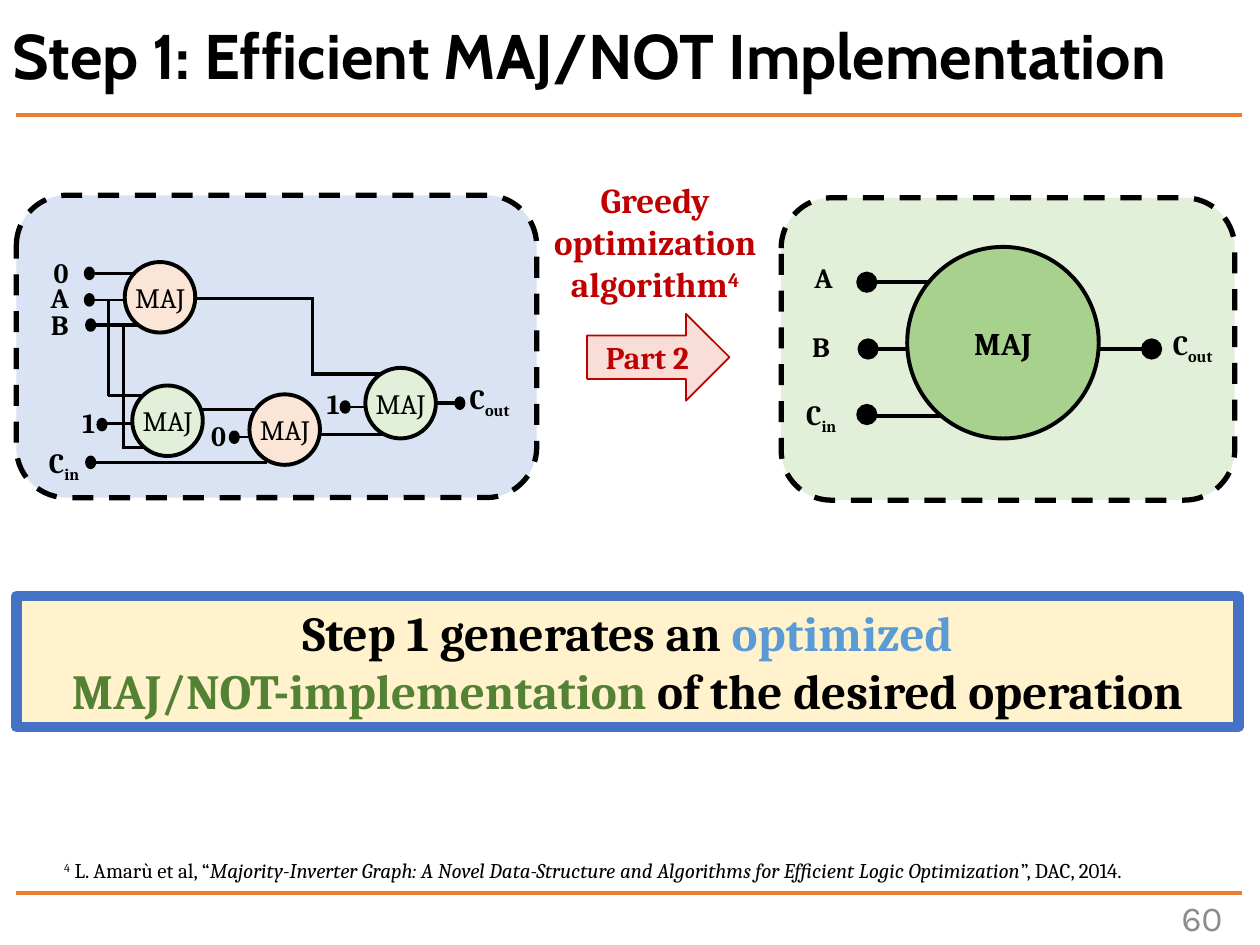
from lxml import etree
from pptx import Presentation
from pptx.dml.color import RGBColor
from pptx.enum.dml import MSO_LINE
from pptx.enum.shapes import MSO_CONNECTOR, MSO_SHAPE
from pptx.enum.text import MSO_ANCHOR, MSO_AUTO_SIZE, PP_ALIGN
from pptx.oxml.ns import qn
from pptx.util import Pt

PX = 9144
RECT, ROUND = MSO_SHAPE.RECTANGLE, MSO_SHAPE.ROUNDED_RECTANGLE
OVAL, NODE = MSO_SHAPE.OVAL, MSO_SHAPE.FLOWCHART_CONNECTOR
ARROW, WIRE, DASH = MSO_SHAPE.RIGHT_ARROW, MSO_CONNECTOR.STRAIGHT, MSO_LINE.DASH
LEFT, MID, RIGHT = PP_ALIGN.LEFT, PP_ALIGN.CENTER, PP_ALIGN.RIGHT
TOP, CENTER = MSO_ANCHOR.TOP, MSO_ANCHOR.MIDDLE
FIXED = MSO_AUTO_SIZE.NONE

HUES = {
    "ink": "000000", "rule": "ED7D31", "page": "8C8C8C", "red": "C00000",
    "blush": "F9DED7", "cream": "FFF2CC", "frame": "4472C4", "sky": "5B9BD5",
    "leaf": "548235", "mint": "E2F0D9", "green": "A9D18E", "ice": "DAE3F3",
    "peach": "FBE5D6",
}
SUB, SUPER = {"base": -25000}, {"base": 30000}
C_IN = [("C", {}), ("in", SUB)]
C_OUT = [("C", {}), ("out", SUB)]


def hue(name):
    return RGBColor.from_string(HUES[name])


def scale(*spans):
    return [span * PX for span in spans]


def write(frame, rows, size=16, face="Cambria", color="ink", bold=True,
          align=MID, anchor=TOP, wrap=True, inset=None):
    frame.auto_size = FIXED
    frame.word_wrap = wrap
    frame.vertical_anchor = anchor
    if inset is not None:
        frame.margin_left = frame.margin_right = inset * PX
        frame.margin_top = frame.margin_bottom = inset * PX
    for i, row in enumerate(rows):
        para = frame.paragraphs[0] if i == 0 else frame.add_paragraph()
        para.alignment = align
        for text, style in [(row, {})] if isinstance(row, str) else row:
            run = para.add_run()
            run.text = text
            font = run.font
            font.name, font.size, font.bold = face, Pt(size), bold
            font.italic = style.get("italic", False)
            font.color.rgb = hue(style.get("color", color))
            if "base" in style:
                run._r.get_or_add_rPr().set("baseline", str(style["base"]))


def label(slide, box, rows, **style):
    write(slide.shapes.add_textbox(*scale(*box)).text_frame, rows, **style)


def shape(slide, kind, box, fill, edge="ink", width=2, dash=None):
    item = slide.shapes.add_shape(kind, *scale(*box))
    item.shadow.inherit = False
    item.fill.solid()
    item.fill.fore_color.rgb = hue(fill)
    item.line.color.rgb = hue(edge)
    item.line.width = Pt(width)
    if dash:
        item.line.dash_style = dash
    etree.SubElement(item._element.spPr.find(qn("a:ln")), qn("a:round"))
    return item


def line(slide, ends, color="ink", width=2):
    item = slide.shapes.add_connector(WIRE, *scale(*ends))
    item.line.color.rgb = hue(color)
    item.line.width = Pt(width)
    etree.SubElement(item._element.spPr, qn("a:effectLst"))


def gate(slide, x, y, side, fill, **style):
    item = shape(slide, OVAL, (x, y, side, side), fill, width=2.25)
    write(item.text_frame, ["MAJ"], anchor=CENTER, **style)


def graph(slide):
    shape(slide, ROUND, (13, 155, 413, 240), "ice", width=3, dash=DASH)
    for ends in [
        (107, 217, 75, 217), (115, 258, 75, 258), (249, 237, 155, 237),
        (212, 367, 72, 367), (318, 345, 251, 345), (113, 314, 86, 314),
        (117, 355, 97, 355), (210, 325, 159, 325), (86, 238, 86, 314),
        (98, 257, 98, 355), (312, 297, 247, 297), (346, 320, 368, 320),
        (248, 297, 248, 237),
    ]:
        line(slide, ends)
    for ends in [(72, 238, 99, 238), (188, 347, 198, 347),
                 (275, 323, 291, 323), (106, 336, 80, 336)]:
        line(slide, ends, width=1.5)
    for x, y in [(68, 213), (68, 234), (69, 254), (69, 363),
                 (78, 333), (183, 343), (271, 319), (362, 316)]:
        shape(slide, NODE, (x, y, 6, 8), "ink")
    for x, y, fill in [(99, 208, "peach"), (105, 306, "mint"),
                       (198, 313, "peach"), (290, 292, "mint")]:
        gate(slide, x, y, 56, fill, bold=False, inset=0)
    for x, y, text in [(31, 198, "0"), (30, 218, "A"), (30, 239, "B"),
                       (156, 327, "0"), (247, 302, "1"), (53, 317, "1")]:
        label(slide, (x, y, 35, 37), [text], wrap=False)
    label(slide, (29, 349, 47, 37), [C_IN], align=LEFT, wrap=False)
    label(slide, (363, 298, 56, 37), [C_OUT], align=LEFT, wrap=False)


def result(slide):
    shape(slide, ROUND, (620, 157, 360, 240), "mint", width=3, dash=DASH)
    for ends in [(917, 277, 849, 277), (762, 224, 694, 224),
                 (762, 277, 694, 277), (757, 330, 690, 330)]:
        line(slide, ends)
    for x, y in [(907, 270), (681, 217), (682, 270), (681, 322)]:
        shape(slide, NODE, (x, y, 14, 14), "ink")
    gate(slide, 720, 196, 152, "green", size=18)
    label(slide, (636, 202, 35, 37), ["A"], wrap=False)
    label(slide, (634, 257, 35, 37), ["B"], wrap=False)
    label(slide, (630, 311, 47, 37), [C_IN], align=LEFT, wrap=False)
    label(slide, (921, 255, 56, 37), [C_OUT], align=LEFT, wrap=False)


def main():
    deck = Presentation()
    deck.slide_width, deck.slide_height = scale(1000, 750)
    slide = deck.slides.add_slide(deck.slide_layouts[5])

    title = slide.shapes.title
    title.left, title.top, title.width, title.height = scale(0, 3, 1008, 81)
    write(title.text_frame, ["Step 1: Efficient MAJ/NOT Implementation"],
          size=36, face="Cabin", align=LEFT, anchor=CENTER)
    for y in (91, 709):
        line(slide, (13, y, 986, y), "rule", 2.25)
    label(slide, (872, 708, 108, 40), ["60"], size=20, face="Karla",
          color="page", bold=False, align=RIGHT, anchor=CENTER)

    graph(slide)
    result(slide)

    label(slide, (416, 137, 208, 111),
          ["Greedy", "optimization", [("algorithm", {}), ("4", SUPER)]],
          size=20, color="red")
    part = shape(slide, ARROW, (466, 249, 113, 69), "blush", "red", 1)
    write(part.text_frame, ["Part 2"], size=18, color="red", anchor=CENTER)

    claim = shape(slide, RECT, (13, 473, 970, 104), "cream", "frame", 6)
    write(claim.text_frame, [
        [("Step 1 generates an ", {}), ("optimized", {"color": "sky"})],
        [("MAJ/NOT-implementation ", {"color": "leaf"}),
         ("of the desired operation", {})],
    ], size=28)
    label(slide, (41, 676, 921, 30), [[
        ("4", SUPER), (" L. Amarù et al, “", {}),
        ("Majority-Inverter Graph: A Novel Data-Structure and Algorithms "
         "for Efficient Logic Optimization", {"italic": True}),
        ("”, DAC, 2014.", {}),
    ]], size=12, bold=False, align=LEFT, wrap=False)

    deck.save("out.pptx")


if __name__ == "__main__":
    main()
